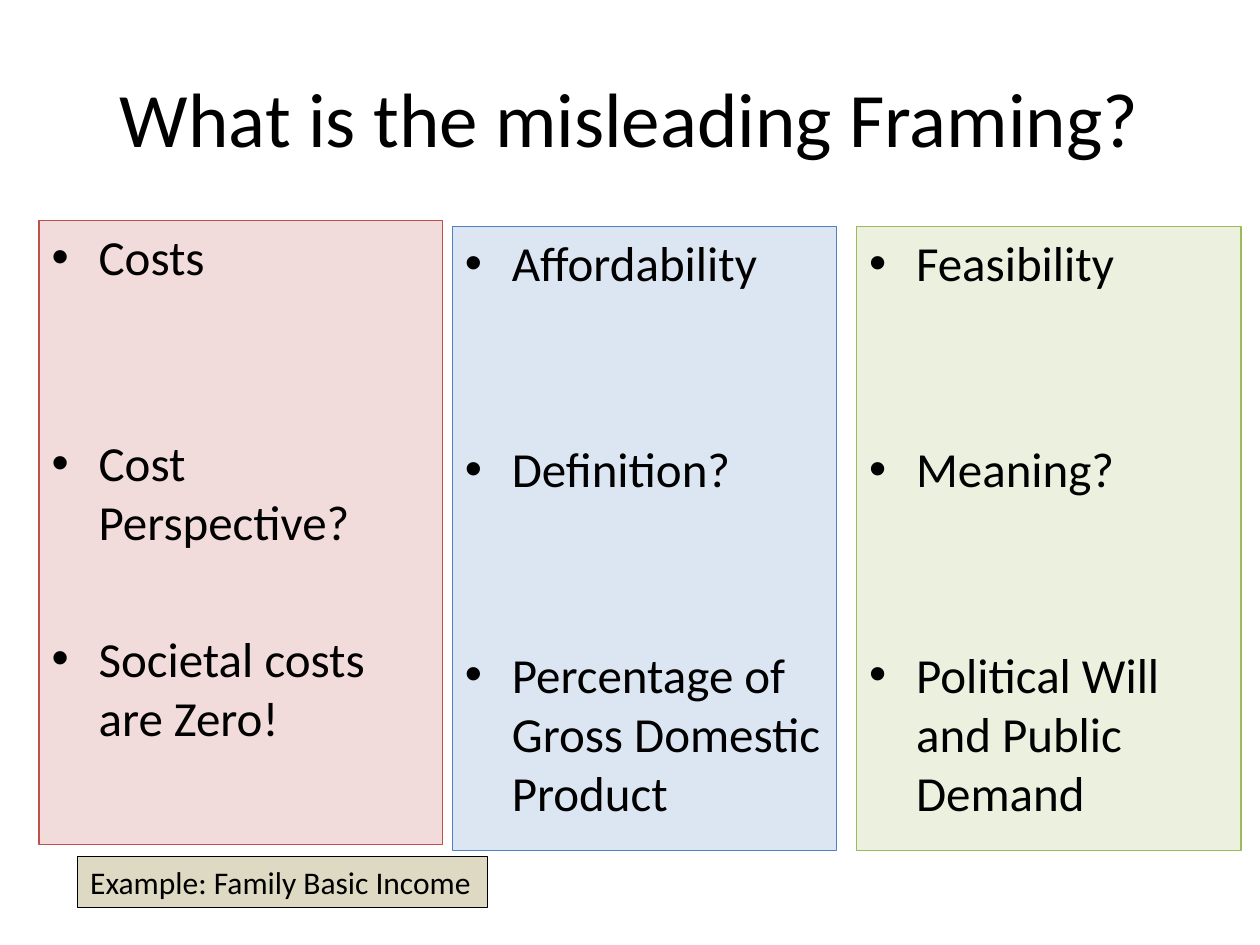
from lxml.etree import SubElement
from pptx import Presentation
from pptx.dml.color import RGBColor
from pptx.enum.shapes import MSO_SHAPE
from pptx.enum.text import MSO_ANCHOR, MSO_AUTO_SIZE, PP_ALIGN
from pptx.oxml.ns import qn
from pptx.util import Cm, Pt

FONT = "Calibri"
COLORS = {
    "text": "000000",
    "costs": "F2DCDB", "costs_line": "C0504D",
    "affordability": "DCE6F2", "affordability_line": "4F81BD",
    "feasibility": "EBF1DE", "feasibility_line": "9BBB59",
    "example": "DDD9C3", "example_line": "000000",
}
FIRST_SPACE = 5.6  # points above the first bullet
WIDE_SPACE = 84    # points between bullets
NARROW_SPACE = 44.5

# name, left, top, width (cm), bullets with the space above each
COLUMNS = [
    ("costs", 0.79, 4.45, 8.13, [
        ("Costs", FIRST_SPACE),
        ("Cost Perspective?", WIDE_SPACE),
        ("Societal costs are Zero!", NARROW_SPACE)]),
    ("affordability", 9.12, 4.57, 7.75, [
        ("Affordability", FIRST_SPACE),
        ("Definition?", WIDE_SPACE),
        ("Percentage of Gross Domestic Product", WIDE_SPACE)]),
    ("feasibility", 17.27, 4.57, 7.75, [
        ("Feasibility", FIRST_SPACE),
        ("Meaning?", WIDE_SPACE),
        ("Political Will and Public Demand", WIDE_SPACE)]),
]
COLUMN_HEIGHT = 12.57


def color(name):
    return RGBColor.from_string(COLORS[name])


def add_span(para, text, size):
    span = para.add_run()
    span.text = text
    span.font.name = FONT
    span.font.size = Pt(size)
    span.font.color.rgb = color("text")


def add_panel(page, name, left, top, width, height):
    panel = page.shapes.add_shape(
        MSO_SHAPE.RECTANGLE, Cm(left), Cm(top), Cm(width), Cm(height))
    panel.shadow.inherit = False
    panel.fill.solid()
    panel.fill.fore_color.rgb = color(name)
    panel.line.color.rgb = color(name + "_line")
    panel.line.width = Pt(0.75)
    frame = panel.text_frame
    frame.word_wrap = True
    frame.vertical_anchor = MSO_ANCHOR.TOP
    frame.paragraphs[0].alignment = PP_ALIGN.LEFT
    return frame


def add_bullet(para, text, space):
    para.alignment = PP_ALIGN.LEFT
    para.space_before = Pt(space)
    properties = para._p.get_or_add_pPr()
    properties.set("marL", str(Cm(0.95)))
    properties.set("indent", str(-Cm(0.95)))
    SubElement(properties, qn("a:buFont"), typeface="Arial")
    SubElement(properties, qn("a:buChar"), char="•")
    add_span(para, text, 28)


def add_column(page, name, left, top, width, bullets):
    frame = add_panel(page, name, left, top, width, COLUMN_HEIGHT)
    for index, (text, space) in enumerate(bullets):
        para = frame.add_paragraph() if index else frame.paragraphs[0]
        add_bullet(para, text, space)


def add_title(page, text):
    box = page.shapes.add_textbox(Cm(1.27), Cm(0.76), Cm(22.86), Cm(3.18))
    frame = box.text_frame
    frame.word_wrap = True
    frame.vertical_anchor = MSO_ANCHOR.MIDDLE
    para = frame.paragraphs[0]
    para.alignment = PP_ALIGN.CENTER
    add_span(para, text, 44)


def add_example(page, text):
    frame = add_panel(page, "example", 1.57, 17.27, 8.26, 1.02)
    frame.word_wrap = False
    frame.auto_size = MSO_AUTO_SIZE.SHAPE_TO_FIT_TEXT
    add_span(frame.paragraphs[0], text, 18)


def main():
    deck = Presentation()
    deck.slide_width, deck.slide_height = Cm(25.4), Cm(19.05)
    page = deck.slides.add_slide(deck.slide_layouts[6])

    # Heading
    add_title(page, "What is the misleading Framing?")

    # Three framing columns
    for column in COLUMNS:
        add_column(page, *column)

    # Example label
    add_example(page, "Example: Family Basic Income")

    deck.save("out.pptx")


if __name__ == "__main__":
    main()
